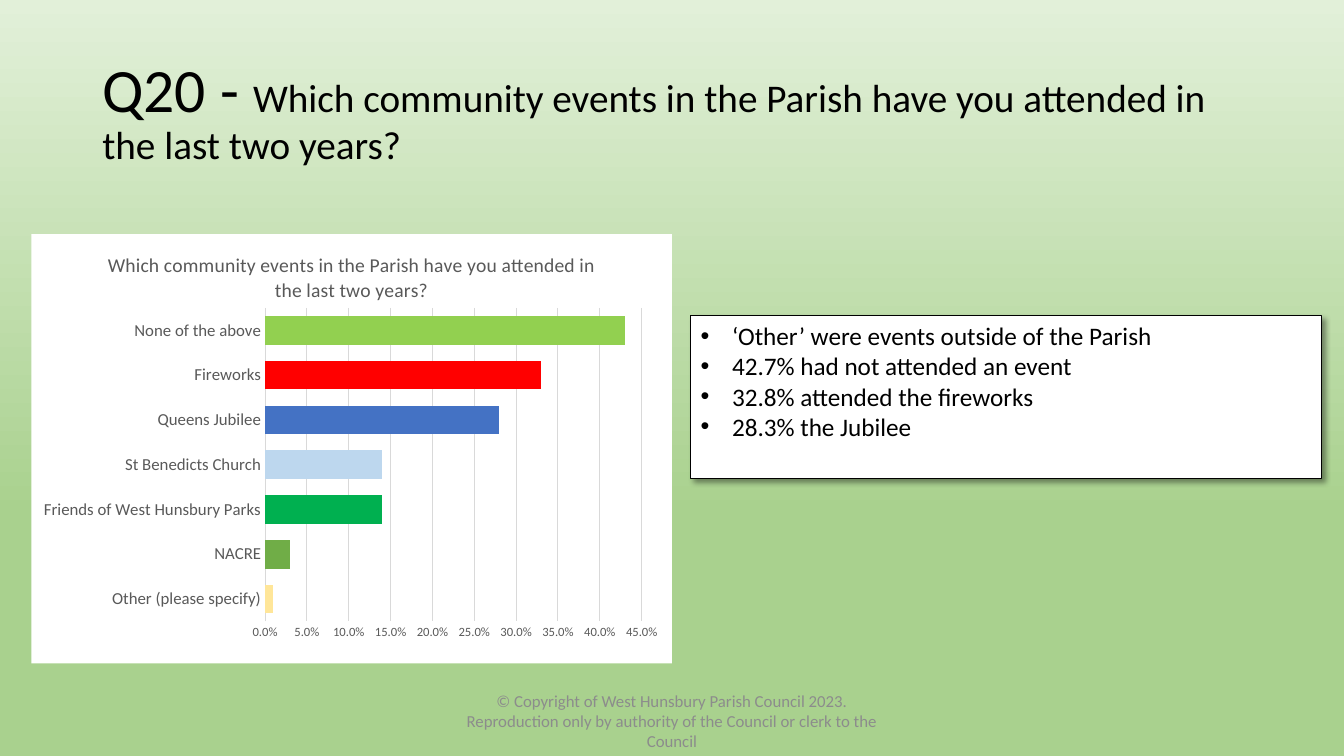
from lxml import etree
from pptx import Presentation
from pptx.chart.data import CategoryChartData
from pptx.dml.color import RGBColor
from pptx.enum import chart as kinds, shapes, text
from pptx.oxml import parse_xml
from pptx.oxml.ns import nsdecls, qn
from pptx.util import Cm, Pt

# Content
QUESTION = "Which community events in the Parish have you attended in the last two years?"
FOOTER = ("© Copyright of West Hunsbury Parish Council 2023. Reproduction only "
          "by authority of the Council or clerk to the Council")
FINDINGS = [
    "‘Other’ were events outside of the Parish",
    "42.7% had not attended an event",
    "32.8% attended the fireworks",
    "28.3% the Jubilee",
]
EVENTS = [  # name, share, bar colour; bottom bar first
    ("Other (please specify)", 0.01, RGBColor(0xFF, 0xE6, 0x99)),
    ("NACRE", 0.03, RGBColor(0x70, 0xAD, 0x47)),
    ("Friends of West Hunsbury Parks", 0.14, RGBColor(0x00, 0xB0, 0x50)),
    ("St Benedicts Church", 0.14, RGBColor(0xBD, 0xD7, 0xEE)),
    ("Queens Jubilee", 0.28, RGBColor(0x44, 0x72, 0xC4)),
    ("Fireworks", 0.33, RGBColor(0xFF, 0x00, 0x00)),
    ("None of the above", 0.43, RGBColor(0x92, 0xD0, 0x50)),
]

# Style
FONT = "Calibri"
BLACK = RGBColor(0x00, 0x00, 0x00)
WHITE = RGBColor(0xFF, 0xFF, 0xFF)
GREY = RGBColor(0x8C, 0x8C, 0x8C)
CHART_TEXT = RGBColor(0x59, 0x59, 0x59)
CHART_LINE = RGBColor(0xD9, 0xD9, 0xD9)
SKY = RGBColor(0xE2, 0xF0, 0xD9)
GRASS = RGBColor(0xA9, 0xD1, 0x8E)

# Places: left, top, width, height
TITLE_AT = [Cm(n) for n in (2.33, 1.02, 29.21, 3.68)]
FOOTER_AT = [Cm(n) for n in (11.22, 17.65, 11.43, 1.02)]
CHART_AT = [Cm(n) for n in (0.79, 5.9, 16.14, 10.82)]
NOTE_AT = [Cm(n) for n in (17.41, 7.95, 15.9, 4.11)]
PLOT = {"x": 0.365, "y": 0.172, "w": 0.588, "h": 0.73}  # shares of the chart
INDENT = Cm(0.79)


def set_font(font, size, color):
    font.name, font.size, font.bold = FONT, Pt(size), False
    font.color.rgb = color


def write(box, paragraphs, color=BLACK, align=text.PP_ALIGN.LEFT,
          anchor=text.MSO_ANCHOR.MIDDLE, spacing=1.0, bullet=None):
    """Fill a box with paragraphs, each a list of (words, size)."""
    frame = box.text_frame
    frame.word_wrap = True
    frame.vertical_anchor = anchor
    for i, spans in enumerate(paragraphs):
        para = frame.add_paragraph() if i else frame.paragraphs[0]
        para.alignment, para.line_spacing = align, spacing
        for words, size in spans:
            span = para.add_run()
            span.text = words
            set_font(span.font, size, color)
        if bullet:
            props = para._p.get_or_add_pPr()
            props.set("marL", str(INDENT))
            props.set("indent", str(-INDENT))
            etree.SubElement(props, qn("a:buFont")).set("typeface", "Arial")
            etree.SubElement(props, qn("a:buChar")).set("char", bullet)


def add_event_chart(page):
    data = CategoryChartData(number_format="0.0%")
    data.categories = [name for name, _, _ in EVENTS]
    data.add_series("Series 1", [share for _, share, _ in EVENTS])
    chart = page.shapes.add_chart(
        kinds.XL_CHART_TYPE.BAR_CLUSTERED, *CHART_AT, data).chart
    set_font(chart.font, 10, BLACK)
    chart.has_legend = False
    chart.has_title = True
    heading = chart.chart_title.text_frame.paragraphs[0].add_run()
    heading.text = QUESTION
    set_font(heading.font, 14, CHART_TEXT)

    # Bars
    plot = chart.plots[0]
    plot.gap_width, plot.vary_by_categories = 56, False
    for i, (_, _, color) in enumerate(EVENTS):
        fill = plot.series[0].points[i].format.fill
        fill.solid()
        fill.fore_color.rgb = color

    # Axes
    names, shares = chart.category_axis, chart.value_axis
    for axis, size in ((names, 12), (shares, 9)):
        set_font(axis.tick_labels.font, size, CHART_TEXT)
        axis.major_tick_mark = axis.minor_tick_mark = kinds.XL_TICK_MARK.NONE
    shares.minimum_scale, shares.maximum_scale, shares.major_unit = 0, 0.45, 0.05
    shares.tick_labels.number_format = "0.0%"
    shares.tick_labels.number_format_is_linked = False
    shares.format.line.fill.background()
    for line in (names.format.line, shares.major_gridlines.format.line):
        line.color.rgb, line.width = CHART_LINE, Pt(0.75)

    # Plot position and white backing
    parts = '<c:layoutTarget val="inner"/><c:xMode val="edge"/><c:yMode val="edge"/>'
    parts += "".join(f'<c:{key} val="{share}"/>' for key, share in PLOT.items())
    area = chart._chartSpace.chart.plotArea
    for layout in area.findall(qn("c:layout")):
        area.remove(layout)
    area.insert(0, parse_xml(
        f'<c:layout {nsdecls("c")}><c:manualLayout>{parts}</c:manualLayout></c:layout>'))
    chart._chartSpace.chart.addnext(parse_xml(
        f'<c:spPr {nsdecls("c", "a")}><a:solidFill><a:srgbClr val="{WHITE}"/>'
        '</a:solidFill><a:ln><a:noFill/></a:ln></c:spPr>'))


def add_findings(page):
    box = page.shapes.add_shape(shapes.MSO_SHAPE.RECTANGLE, *NOTE_AT)
    box.fill.solid()
    box.fill.fore_color.rgb = WHITE
    box.line.color.rgb, box.line.width = BLACK, Pt(0.75)
    box.shadow.inherit = False
    effects = box._element.spPr.find(qn("a:effectLst"))
    effects.append(parse_xml(
        f'<a:outerShdw {nsdecls("a")} blurRad="{Pt(4)}" dist="{Pt(3)}" dir="2700000" '
        f'algn="tl" rotWithShape="0"><a:srgbClr val="{BLACK}"><a:alpha val="40000"/>'
        '</a:srgbClr></a:outerShdw>'))
    write(box, [[(line, 18)] for line in FINDINGS],
          anchor=text.MSO_ANCHOR.TOP, bullet="•")


def main():
    deck = Presentation()
    deck.slide_width, deck.slide_height = Cm(33.87), Cm(19.05)
    page = deck.slides.add_slide(deck.slide_layouts[6])

    # Background fades downwards
    backdrop = page.background.fill
    backdrop.gradient()
    backdrop.gradient_angle = 270
    for stop, color, position in zip(backdrop.gradient_stops, (SKY, GRASS), (0, 0.68)):
        stop.color.rgb, stop.position = color, position

    write(page.shapes.add_textbox(*TITLE_AT),
          [[("Q20 - ", 44), (QUESTION, 28)]], spacing=0.9)
    write(page.shapes.add_textbox(*FOOTER_AT), [[(FOOTER, 12)]],
          color=GREY, align=text.PP_ALIGN.CENTER)
    add_event_chart(page)
    add_findings(page)
    deck.save("out.pptx")


if __name__ == "__main__":
    main()
